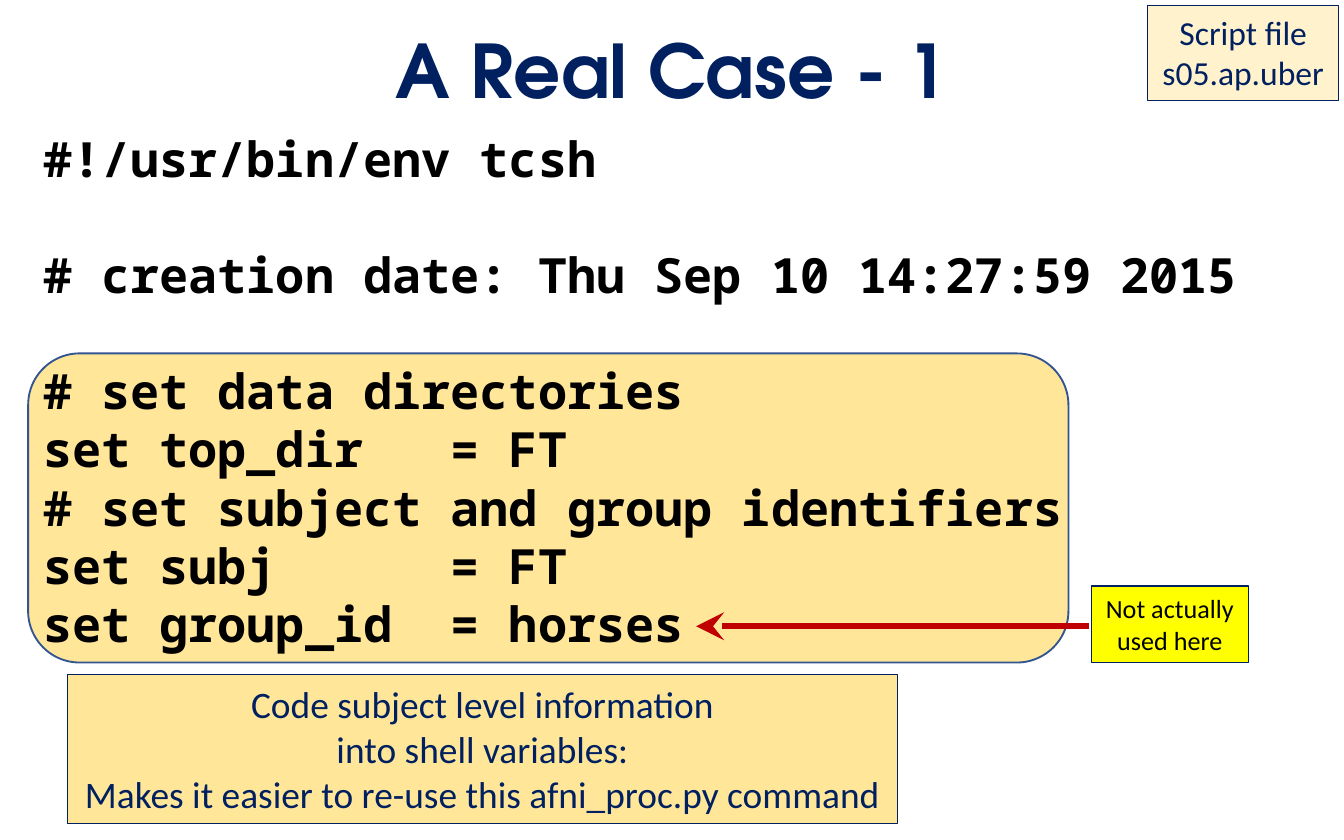
import pptx
import pptx.dml.color
import pptx.enum.shapes
import pptx.enum.text
import pptx.oxml
import pptx.oxml.ns
import pptx.util
from pptx.util import Inches

COLORS = {
    "navy": "002060",
    "black": "000000",
    "gold": "FFE699",
    "cream": "FFF2CC",
    "yellow": "FFFF00",
    "panel_line": "325491",
    "red": "C00000",
}
SHAPES = pptx.enum.shapes.MSO_SHAPE
ALIGN = pptx.enum.text.PP_ALIGN
ANCHOR = pptx.enum.text.MSO_ANCHOR
AUTO_SIZE = pptx.enum.text.MSO_AUTO_SIZE


def rgb(name):
    return pptx.dml.color.RGBColor.from_string(COLORS[name])


def format_text(text_frame, font_name, size, color, bold, align):
    for paragraph in text_frame.paragraphs:
        paragraph.alignment = align
        for run in paragraph.runs:
            run.font.name = font_name
            run.font.size = pptx.util.Pt(size)
            run.font.color.rgb = rgb(color)
            run.font.bold = bold


presentation = pptx.Presentation()
presentation.slide_width = Inches(10)
presentation.slide_height = Inches(6.25)
slide = presentation.slides.add_slide(presentation.slide_layouts[1])

# Title
title = slide.shapes.title
title.left, title.top = Inches(0.69), Inches(0.21)
title.width, title.height = Inches(8.62), Inches(0.69)
title.text_frame.text = "A Real Case - 1"
title.text_frame.auto_size = AUTO_SIZE.NONE
title.text_frame.vertical_anchor = ANCHOR.MIDDLE
title.text_frame.paragraphs[0].line_spacing = 0.9
format_text(title.text_frame, "TeX Gyre Adventor", 39.6, "navy", True, ALIGN.CENTER)

# Panel behind the variable settings
panel = slide.shapes.add_shape(
    SHAPES.ROUNDED_RECTANGLE, Inches(0.21), Inches(2.63), Inches(7.74), Inches(2.3))
panel.shadow.inherit = False
panel.fill.solid()
panel.fill.fore_color.rgb = rgb("gold")
panel.line.color.rgb = rgb("panel_line")
panel.line.width = pptx.util.Pt(1)
title.element.addprevious(panel.element)

# Script listing: three blocks, separated by one line of space
blocks = [
    ["#!/usr/bin/env tcsh"],
    ["# creation date: Thu Sep 10 14:27:59 2015"],
    [
        "# set data directories",
        f"set {'top_dir':<10}= FT",
        "# set subject and group identifiers",
        f"set {'subj':<10}= FT",
        f"set {'group_id':<10}= horses",
    ],
]
listing = slide.placeholders[1]
listing.left, listing.top = Inches(0.22), Inches(0.9)
listing.width, listing.height = Inches(9.59), Inches(5.15)
text_frame = listing.text_frame
text_frame.text = "\n".join(line for block in blocks for line in block)
text_frame.auto_size = AUTO_SIZE.NONE
text_frame.vertical_anchor = ANCHOR.TOP
text_frame.margin_top = Inches(0.06)
block_starts = [block[0] for block in blocks[1:]]
for paragraph in text_frame.paragraphs:
    paragraph.line_spacing = 1.0
    paragraph.space_before = pptx.util.Pt(31 if paragraph.text in block_starts else 0)
    paragraph.space_after = pptx.util.Pt(0)
    properties = paragraph._p.get_or_add_pPr()
    properties.set("marL", "0")
    properties.set("indent", "0")
    properties.append(pptx.oxml.parse_xml(f"<a:buNone {pptx.oxml.ns.nsdecls('a')}/>"))
format_text(text_frame, "Noto Sans Mono", 26, "black", True, ALIGN.LEFT)

# Notes: lines, left, top, width, height, fill, text size, text color
notes = [
    (["Code subject level information", "into shell variables:",
      "Makes it easier to re-use this afni_proc.py command"],
     0.5, 5.02, 6.18, 1.11, "gold", 20, "navy"),
    (["Script file", "s05.ap.uber"], 8.54, 0.04, 1.42, 0.71, "cream", 18, "navy"),
    (["Not actually", "used here"], 8.12, 4.36, 1.17, 0.57, "yellow", 14, "black"),
]
for lines, left, top, width, height, fill, size, color in notes:
    note = slide.shapes.add_shape(
        SHAPES.RECTANGLE, Inches(left), Inches(top), Inches(width), Inches(height))
    note.shadow.inherit = False
    note.fill.solid()
    note.fill.fore_color.rgb = rgb(fill)
    note.line.color.rgb = rgb("navy")
    note.line.width = pptx.util.Pt(0.75)
    note.text_frame.text = "\n".join(lines)
    note.text_frame.word_wrap = False
    note.text_frame.auto_size = AUTO_SIZE.SHAPE_TO_FIT_TEXT
    note.text_frame.vertical_anchor = ANCHOR.TOP
    format_text(note.text_frame, "Calibri", size, color, False, ALIGN.CENTER)

# Arrow from the yellow note to the group setting
arrow = slide.shapes.add_connector(
    pptx.enum.shapes.MSO_CONNECTOR.STRAIGHT,
    Inches(8.1), Inches(4.66), Inches(5.18), Inches(4.66))
arrow.line.color.rgb = rgb("red")
arrow.line.width = pptx.util.Pt(3)
arrow.line._get_or_add_ln().append(pptx.oxml.parse_xml(
    f"<a:tailEnd {pptx.oxml.ns.nsdecls('a')} type='stealth' w='lg' len='lg'/>"))
arrow.element.spPr.append(
    pptx.oxml.parse_xml(f"<a:effectLst {pptx.oxml.ns.nsdecls('a')}/>"))

presentation.save("out.pptx")
